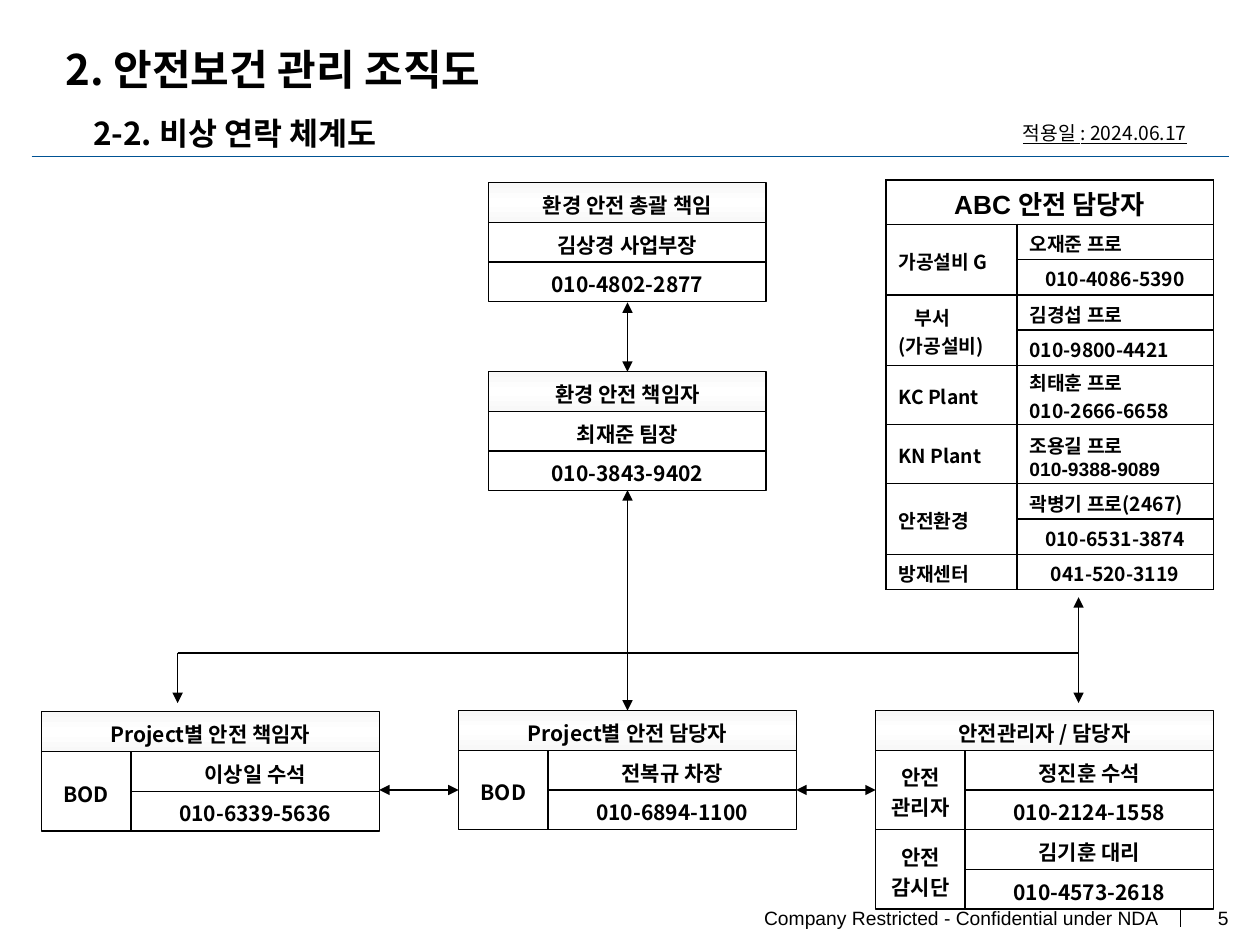
from dataclasses import dataclass

from lxml import etree
from pptx import Presentation
from pptx import util as u
from pptx.dml.color import RGBColor
from pptx.enum import shapes, text
from pptx.oxml.ns import qn

KOREAN = "Noto Sans CJK KR"
BLACK, WHITE, BLUE, PALE = "000000", "FFFFFF", "005293", "F8F8F8"
ROW = 0.315  # height of one box in a contact card
TAG = 0.71  # width of the role box at the left of a card
LEFT, CENTER, RIGHT = text.PP_ALIGN.LEFT, text.PP_ALIGN.CENTER, text.PP_ALIGN.RIGHT
MIDDLE = text.MSO_ANCHOR.MIDDLE


@dataclass
class Contact:
    name: str
    phone: str
    role: str = ""


@dataclass
class Card:
    left: float
    top: float
    width: float
    heading: str
    contacts: list[Contact]


@dataclass
class Arrow:
    start: tuple[float, float]
    end: tuple[float, float]
    heads: tuple[str, ...] = ("headEnd", "tailEnd")
    width: float = 0.75
    color: str = BLACK


@dataclass
class Entry:
    role: str
    details: list[str]  # one table row each
    centered: tuple[int, ...] = ()
    indent: float = 0
    phone_font: str = KOREAN


CARDS = [
    Card(3.88, 1.45, 2.2, "환경 안전 총괄 책임", [Contact("김상경 사업부장", "010-4802-2877")]),
    Card(3.88, 2.95, 2.2, "환경 안전 책임자", [Contact("최재준 팀장", "010-3843-9402")]),
    Card(0.33, 5.65, 2.68, "Project별 안전 책임자", [Contact("이상일 수석", "010-6339-5636", "BOD")]),
    Card(3.64, 5.64, 2.68, "Project별 안전 담당자", [Contact("전복규 차장", "010-6894-1100", "BOD")]),
    Card(6.95, 5.64, 2.68, "안전관리자 / 담당자", [
        Contact("정진훈 수석", "010-2124-1558", "안전\n관리자"),
        Contact("김기훈 대리", "010-4573-2618", "안전\n감시단"),
    ]),
]
ARROWS = [
    Arrow((0.25, 1.24), (9.75, 1.24), (), 0.75, BLUE),  # rule under the headings
    Arrow((9.37, 7.21), (9.37, 7.36), (), 1),  # footer divider
    Arrow((4.98, 2.4), (4.98, 2.95)),
    Arrow((4.98, 3.89), (4.98, 5.64)),
    Arrow((3.01, 6.27), (3.64, 6.27)),
    Arrow((6.32, 6.27), (6.95, 6.27)),
    Arrow((8.56, 4.74), (8.56, 5.58)),
    Arrow((1.41, 5.18), (8.56, 5.18), (), 1),
    Arrow((1.41, 5.18), (1.41, 5.58), ("tailEnd",)),
]
ENTRIES = [
    Entry("가공설비 G", ["오재준 프로", "010-4086-5390"], (1,)),
    Entry("부서\n(가공설비)", ["김경섭 프로", "010-9800-4421"], indent=0.13),
    Entry("KC Plant", ["최태훈 프로\n010-2666-6658"]),
    Entry("KN Plant", ["조용길 프로\n010-9388-9089"], phone_font="Arial"),
    Entry("안전환경", ["곽병기 프로(2467)", "010-6531-3874"], (1,)),
    Entry("방재센터", ["041-520-3119"], (0,)),
]


def rgb(color: str) -> RGBColor:
    return RGBColor.from_string(color)


def write(frame, words: str, size: float, bold=False, align=LEFT, font=KOREAN,
          spacing=1.0, underline=False) -> None:
    frame.text = words
    for para in frame.paragraphs:
        para.alignment, para.line_spacing = align, spacing
        for span in para.runs:
            face = span.font
            face.name, face.size, face.bold = font, u.Pt(size), bold
            face.underline, face.color.rgb = underline, rgb(BLACK)
            east = etree.SubElement(span._r.get_or_add_rPr(), qn("a:ea"))
            east.set("typeface", KOREAN)
            face._element.find(qn("a:latin")).addnext(east)


def add_label(page, left: float, top: float, width: float, height: float, words: str,
              size: float, margin=0.1, anchor=text.MSO_ANCHOR.TOP, **style) -> None:
    frame = page.shapes.add_textbox(*map(u.Inches, (left, top, width, height))).text_frame
    frame.word_wrap, frame.vertical_anchor = True, anchor
    frame.margin_left = frame.margin_right = u.Inches(margin)
    write(frame, words, size, **style)


def add_box(page, left: float, top: float, width: float, height: float, words: str,
            shaded=False) -> None:
    box = page.shapes.add_shape(shapes.MSO_SHAPE.RECTANGLE,
                                *map(u.Inches, (left, top, width, height)))
    box.shadow.inherit = False
    box.line.color.rgb, box.line.width = rgb(BLACK), u.Pt(0.75)
    if shaded:
        box.fill.gradient()
        box.fill.gradient_angle = 90
        stops = next(box._element.spPr.iter(qn("a:gsLst")))
        for stop in list(stops):
            stops.remove(stop)
        for place, color in ((0, PALE), (50000, WHITE), (100000, PALE)):
            stop = etree.SubElement(stops, qn("a:gs"), pos=str(place))
            etree.SubElement(stop, qn("a:srgbClr"), val=color)
    else:
        box.fill.solid()
        box.fill.fore_color.rgb = rgb(WHITE)
    box.text_frame.word_wrap = False
    box.text_frame.vertical_anchor = MIDDLE
    write(box.text_frame, words, 12, bold=True, align=CENTER, spacing=1.2)


def add_card(page, card: Card) -> None:
    add_box(page, card.left, card.top, card.width, ROW, card.heading, shaded=True)
    for index, contact in enumerate(card.contacts):
        top = card.top + ROW * (1 + 2 * index)
        inset = TAG if contact.role else 0
        if contact.role:
            add_box(page, card.left, top, TAG, 2 * ROW, contact.role)
        for row, words in enumerate((contact.name, contact.phone)):
            add_box(page, card.left + inset, top + row * ROW, card.width - inset, ROW, words)


def add_arrow(page, arrow: Arrow) -> None:
    line = page.shapes.add_connector(shapes.MSO_CONNECTOR.STRAIGHT,
                                     *map(u.Inches, arrow.start + arrow.end))
    line.line.color.rgb, line.line.width = rgb(arrow.color), u.Pt(arrow.width)
    for head in arrow.heads:
        etree.SubElement(line.line._ln, qn("a:" + head), type="triangle")
    etree.SubElement(line._element.spPr, qn("a:effectLst"))


def format_cell(cell) -> None:
    cell.fill.background()
    cell.margin_top, cell.margin_bottom = u.Inches(0.02), 0
    cell.vertical_anchor = MIDDLE
    properties = cell._tc.get_or_add_tcPr()
    for index, side in enumerate(("lnL", "lnR", "lnT", "lnB")):
        border = etree.Element(qn("a:" + side), w=str(u.Pt(1)))
        fill = etree.SubElement(border, qn("a:solidFill"))
        etree.SubElement(fill, qn("a:srgbClr"), val=BLACK)
        properties.insert(index, border)
    cell.fill.solid()
    cell.fill.fore_color.rgb = rgb(WHITE)


def add_contact_table(page) -> None:
    heights = [0.35]
    for entry in ENTRIES:
        heights += [0.47 if "\n" in detail else 0.28 for detail in entry.details]
    table = page.shapes.add_table(len(heights), 2, *map(
        u.Inches, (7.03, 1.43, 2.6, sum(heights)))).table
    table.first_row = table.horz_banding = False
    for column, width in zip(table.columns, (1.04, 1.56)):
        column.width = u.Inches(width)
    for row, height in zip(table.rows, heights):
        row.height = u.Inches(height)
    for cell in table.iter_cells():
        format_cell(cell)

    table.cell(0, 0).merge(table.cell(0, 1))
    write(table.cell(0, 0).text_frame, "ABC 안전 담당자", 15, True, CENTER, "Arial")
    top = 1
    for entry in ENTRIES:
        role = table.cell(top, 0)
        if len(entry.details) > 1:
            role.merge(table.cell(top + len(entry.details) - 1, 0))
        write(role.text_frame, entry.role, 11, True)
        if entry.indent:
            role.text_frame.paragraphs[0]._p.get_or_add_pPr().set(
                "marL", str(u.Inches(entry.indent)))
        for index, detail in enumerate(entry.details):
            frame = table.cell(top + index, 1).text_frame
            write(frame, detail, 11, True, CENTER if index in entry.centered else LEFT)
            frame.paragraphs[-1].runs[0].font.name = entry.phone_font
        top += len(entry.details)


def main() -> None:
    deck = Presentation()
    deck.slide_width, deck.slide_height = u.Inches(10), u.Inches(7.5)
    page = deck.slides.add_slide(deck.slide_layouts[5])

    # Headings
    title = page.shapes.title
    title.left, title.top, title.width, title.height = map(u.Inches, (0.42, 0.29, 5.75, 0.51))
    title.text_frame.auto_size = text.MSO_AUTO_SIZE.NONE
    title.text_frame.vertical_anchor = MIDDLE
    write(title.text_frame, "2. 안전보건 관리 조직도", 24, bold=True)
    add_label(page, 0.64, 0.8, 3.24, 0.46, "2-2. 비상 연락 체계도", 18, bold=True, spacing=1.2)
    add_label(page, 8.02, 0.91, 1.67, 0.29, "적용일 : 2024.06.17", 11, underline=True)

    # Contact chart
    for card in CARDS:
        add_card(page, card)
    add_contact_table(page)
    for arrow in ARROWS:
        add_arrow(page, arrow)

    # Footer
    footer = dict(size=11, margin=0, anchor=MIDDLE, align=RIGHT, font="Arial")
    add_label(page, 5.7, 7.14, 3.5, 0.29, "Company Restricted - Confidential under NDA", **footer)
    add_label(page, 9.24, 7.14, 0.51, 0.29, "5", **footer)
    deck.save("out.pptx")


if __name__ == "__main__":
    main()
